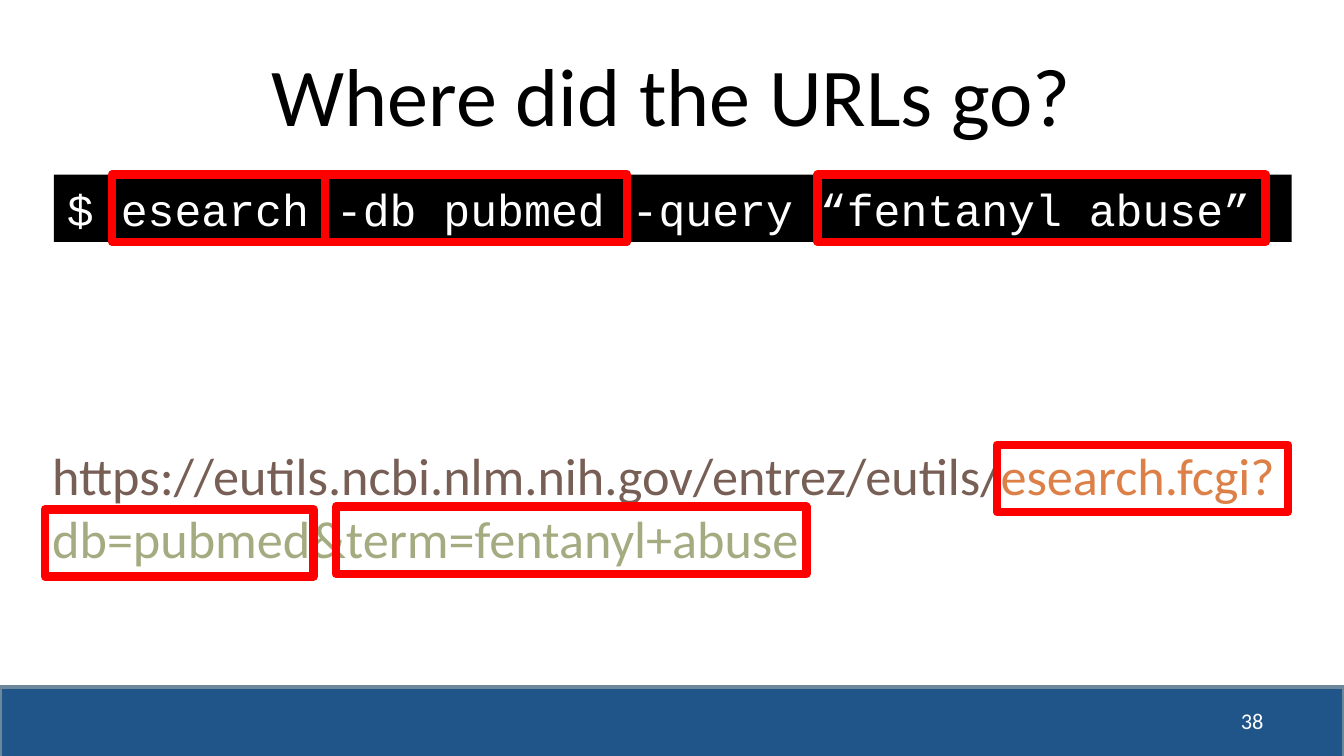
from pptx import Presentation
from pptx import util as u
from pptx.dml.color import RGBColor
from pptx.enum import shapes, text

COLORS = {
    "ink": "000000", "paper": "FFFFFF", "band": "20558A", "band_edge": "6D879B",
    "highlight": "FF0000", "base": "775F55", "utility": "DD8047", "parameters": "A5AB81",
}
COLUMN = u.Inches(1) // 12  # the slide is 120 columns wide
FRAME_HEIGHT = 0.5


def rgb(name):
    return RGBColor.from_string(COLORS[name])


def inches(*lengths):
    return [u.Inches(length) for length in lengths]


def add_box(slide, box, fill=None, line=None, weight=0):
    """Draw a rectangle; without a fill or line name that part stays empty."""
    rect = slide.shapes.add_shape(shapes.MSO_SHAPE.RECTANGLE, *box)
    rect.shadow.inherit = False
    if fill:
        rect.fill.solid()
        rect.fill.fore_color.rgb = rgb(fill)
    else:
        rect.fill.background()
    if line:
        rect.line.color.rgb = rgb(line)
        rect.line.width = u.Pt(weight)
    else:
        rect.line.fill.background()
    return rect


def write(shape, parts, size, font="Calibri", align=text.PP_ALIGN.LEFT,
          anchor=text.MSO_ANCHOR.TOP):
    """Fill a shape with one paragraph of (wording, color) parts."""
    frame = shape.text_frame
    frame.word_wrap = True
    frame.auto_size = text.MSO_AUTO_SIZE.NONE
    frame.vertical_anchor = anchor
    paragraph = frame.paragraphs[0]
    paragraph.alignment = align
    for wording, color in parts:
        run = paragraph.add_run()
        run.text = wording
        run.font.name = font
        run.font.size = u.Pt(size)
        run.font.color.rgb = rgb(color)


def add_title(slide, box):
    title = slide.shapes.title
    title.left, title.top, title.width, title.height = box
    write(title, [("Where did the URLs go?", "ink")], 44,
          align=text.PP_ALIGN.CENTER, anchor=text.MSO_ANCHOR.MIDDLE)


def add_footer(slide, box):
    left, top, width, height = box
    add_box(slide, box, "band", "band_edge", 2)
    number = slide.shapes.add_textbox(
        left + int(width * 0.72), top + u.Inches(0.1), int(width * 0.23), u.Inches(0.3))
    write(number, [("38", "paper")], 12, align=text.PP_ALIGN.RIGHT,
          anchor=text.MSO_ANCHOR.MIDDLE)


def add_command(slide, box):
    command = add_box(slide, box, "ink")
    write(command, [("$ esearch -db pubmed -query “fentanyl abuse”", "paper")],
          24, "Courier New")


def add_url(slide, box):
    url = slide.shapes.add_textbox(*box)
    write(url, [("https://eutils.ncbi.nlm.nih.gov/entrez/eutils/", "base"),
                ("esearch.fcgi?", "utility"),
                ("db=pubmed&term=fentanyl+abuse", "parameters")], 28)


def add_highlights(slide, top, spans):
    """Frame each (first column, column count) span at the given height."""
    for first, count in spans:
        box = (first * COLUMN, u.Inches(top), count * COLUMN, u.Inches(FRAME_HEIGHT))
        add_box(slide, box, line="highlight", weight=4.5)


def main():
    prs = Presentation()
    prs.slide_width = u.Inches(10)
    prs.slide_height = prs.slide_width * 9 // 16
    slide = prs.slides.add_slide(prs.slide_layouts[5])

    add_footer(slide, inches(0, 5.11, 10, 0.58))
    add_title(slide, inches(0.5, 0.23, 9, 0.94))
    add_command(slide, inches(0.4, 1.3, 9.21, FRAME_HEIGHT))
    add_url(slide, inches(0.29, 3.25, 9.42, 1.04))

    # Matching parts of the command and of the URL
    add_highlights(slide, 1.3, [(10, 19), (29, 27), (73, 40)])
    add_highlights(slide, 3.31, [(89, 26)])
    add_highlights(slide, 3.79, [(4, 24)])
    add_highlights(slide, 3.77, [(30, 42)])
    prs.save("out.pptx")


if __name__ == "__main__":
    main()
